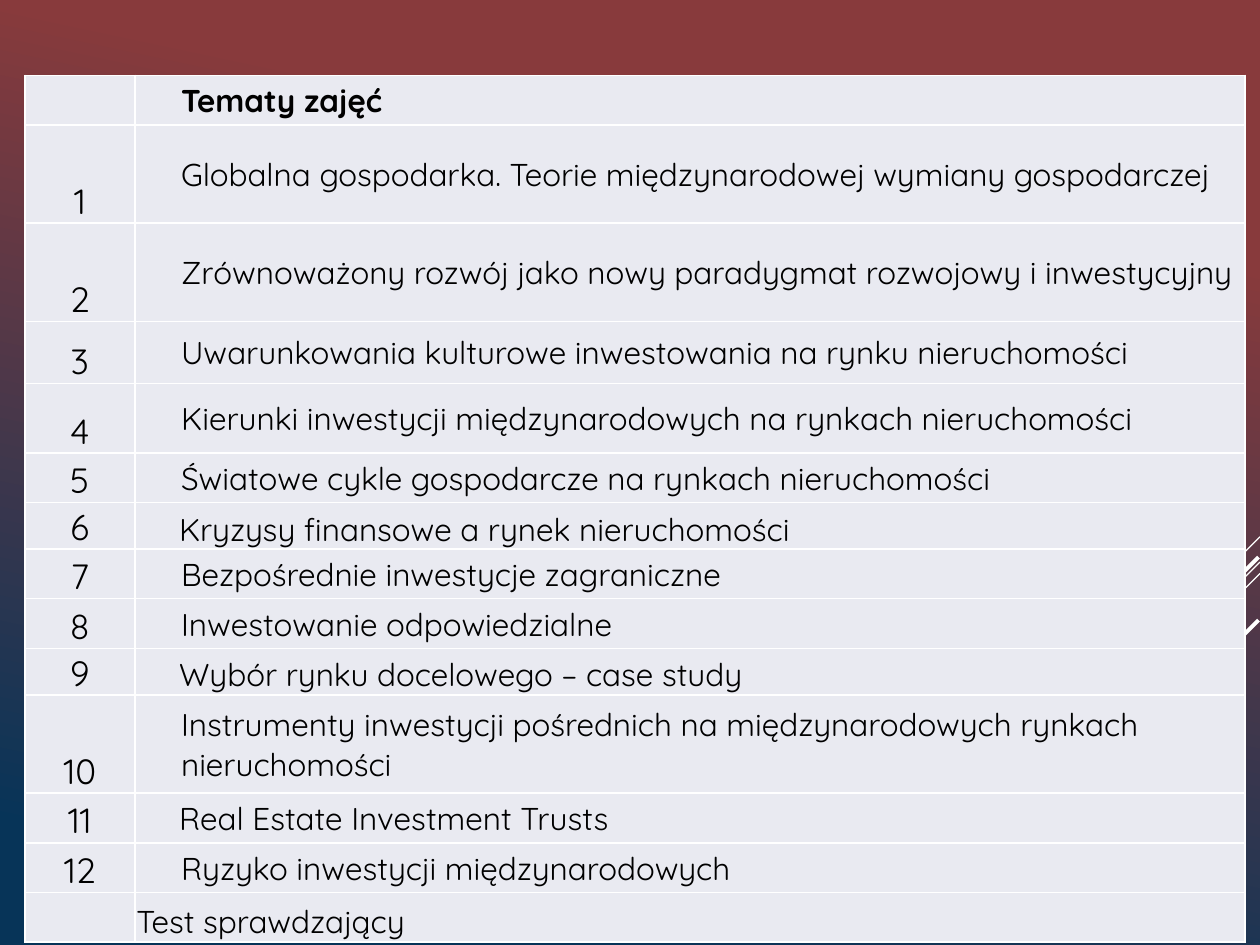
from lxml import etree
from pptx import Presentation
from pptx.dml.color import RGBColor
from pptx.enum import shapes, text
from pptx.oxml import ns
from pptx.util import Cm, Pt

FONT = "Quicksand"
MIDDLE, BOTTOM = text.MSO_ANCHOR.MIDDLE, text.MSO_ANCHOR.BOTTOM
INSET, NARROW_INSET, EDGE = 0.93, 0.89, 0.03
TABLE_BOX = (0.5, 1.52, 24.6)
NUMBER_WIDTH = 2.22
TOPICS = [
    ("", "Tematy zajęć", 1, MIDDLE, INSET),
    ("1", "Globalna gospodarka. Teorie międzynarodowej wymiany gospodarczej", 1.98, MIDDLE, INSET),
    ("2", "Zrównoważony rozwój jako nowy paradygmat rozwojowy i inwestycyjny", 1.98, MIDDLE, INSET),
    ("3", "Uwarunkowania kulturowe inwestowania na rynku nieruchomości", 1.25, MIDDLE, INSET),
    ("4", "Kierunki inwestycji międzynarodowych na rynkach nieruchomości", 1.4, MIDDLE, INSET),
    ("5", "Światowe cykle gospodarcze na rynkach nieruchomości", 1, MIDDLE, INSET),
    ("6", "Kryzysy finansowe a rynek nieruchomości", 0.94, BOTTOM, NARROW_INSET),
    ("7", "Bezpośrednie inwestycje zagraniczne", 1, MIDDLE, INSET),
    ("8", "Inwestowanie odpowiedzialne", 1, MIDDLE, INSET),
    ("9", "Wybór rynku docelowego – case study", 0.94, BOTTOM, NARROW_INSET),
    ("10", "Instrumenty inwestycji pośrednich na międzynarodowych rynkach nieruchomości",
     1.98, MIDDLE, INSET),
    ("11", "Real Estate Investment Trusts", 1, MIDDLE, NARROW_INSET),
    ("12", "Ryzyko inwestycji międzynarodowych", 1, MIDDLE, INSET),
    ("", "Test sprawdzający", 1, BOTTOM, EDGE),
]
STRIPES = [
    (25.4, 10.82, 2.11, 0.75),
    (25.4, 11.33, 6.87, 0.75),
    (25.4, 11.56, 4.37, 0.75),
    (25.37, 11.23, 3.99, 2.25),
    (25.37, 12.5, 2.9, 2.25),
]


def color(value):
    """Turn a hex string into a colour."""
    return RGBColor.from_string(value)


def paint_background(page):
    """Fill the page with a gradient from red down to navy."""
    fill = page.background.fill
    fill.gradient()
    fill.gradient_angle = 258
    for stop, (position, value) in zip(fill.gradient_stops, [(0.22, "883A3C"), (0.9, "073458")]):
        stop.position = position
        stop.color.rgb = color(value)


def draw_stripes(page):
    """Draw the white diagonal lines falling from the right edge."""
    for right, top, reach, width in STRIPES:
        stripe = page.shapes.add_connector(
            shapes.MSO_CONNECTOR.STRAIGHT,
            Cm(right), Cm(top), Cm(right - reach), Cm(top + reach))
        stripe.line.color.rgb = color("FFFFFF")
        stripe.line.width = Pt(width)
        etree.SubElement(stripe._element.spPr, ns.qn("a:effectLst"))


def add_borders(cell):
    """Give a cell thin white borders on all four sides."""
    properties = cell._tc.get_or_add_tcPr()
    for index, side in enumerate(("lnL", "lnR", "lnT", "lnB")):
        border = etree.Element(ns.qn(f"a:{side}"), w=str(Pt(1)))
        fill = etree.SubElement(border, ns.qn("a:solidFill"))
        etree.SubElement(fill, ns.qn("a:srgbClr"), val="FFFFFF")
        properties.insert(index, border)


def fill_cell(cell, words, size, anchor, inset, align, bold):
    """Write and format one table cell."""
    cell.fill.solid()
    cell.fill.fore_color.rgb = color("E9EAF1")
    cell.margin_left, cell.margin_right = Cm(inset), Cm(EDGE)
    cell.margin_top, cell.margin_bottom = Cm(EDGE), 0
    cell.vertical_anchor = anchor
    add_borders(cell)
    if not words:
        return
    cell.text_frame.text = words
    para = cell.text_frame.paragraphs[0]
    para.alignment = align
    for span in para.runs:
        span.font.name = FONT
        span.font.size = Pt(size)
        span.font.bold = bold
        span.font.color.rgb = color("000000")


def add_topics(page, left, top, width):
    """Place the table of numbered class topics."""
    height = sum(topic[2] for topic in TOPICS)
    table = page.shapes.add_table(
        len(TOPICS), 2, Cm(left), Cm(top), Cm(width), Cm(height)).table
    table.horz_banding = False
    table.columns[0].width = Cm(NUMBER_WIDTH)
    table.columns[1].width = Cm(width - NUMBER_WIDTH)
    for index, (number, topic, row_height, anchor, inset) in enumerate(TOPICS):
        table.rows[index].height = Cm(row_height)
        fill_cell(table.cell(index, 0), number, 20, BOTTOM, EDGE, text.PP_ALIGN.CENTER, False)
        fill_cell(table.cell(index, 1), topic, 18, anchor, inset, text.PP_ALIGN.LEFT, index == 0)


def main():
    """Build the deck and save it."""
    deck = Presentation()
    deck.slide_width, deck.slide_height = Cm(25.4), Cm(19.05)
    page = deck.slides.add_slide(deck.slide_layouts[6])
    paint_background(page)
    draw_stripes(page)
    add_topics(page, *TABLE_BOX)
    deck.save("out.pptx")


if __name__ == "__main__":
    main()
